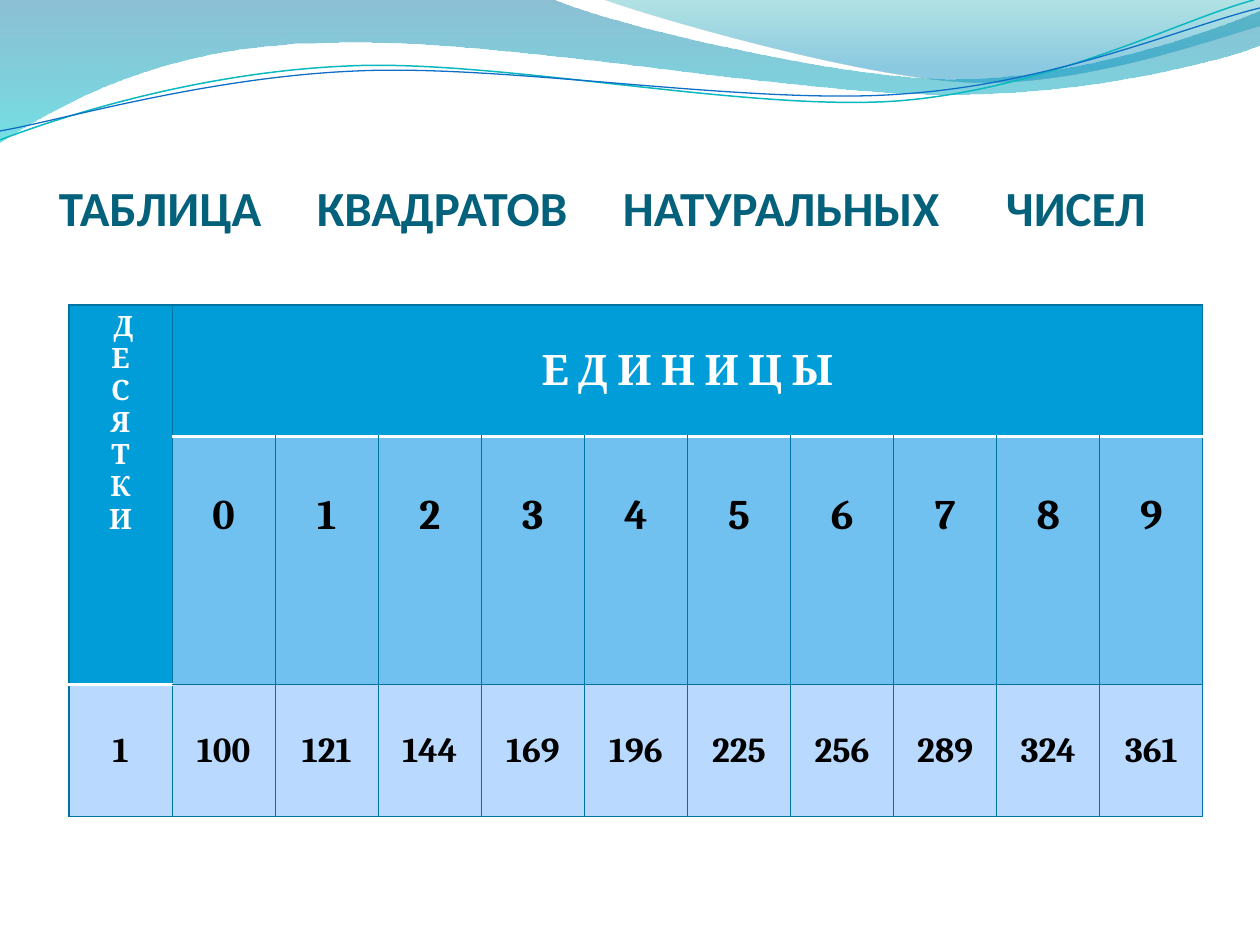
from lxml import etree
from pptx import Presentation
from pptx.dml.color import RGBColor
from pptx.enum.text import MSO_ANCHOR, PP_ALIGN
from pptx.oxml.ns import qn
from pptx.util import Pt

PX = 914400 / 126
CENTER = PP_ALIGN.CENTER
BOTTOM = MSO_ANCHOR.BOTTOM
TOP = MSO_ANCHOR.TOP
WHITE = RGBColor(0xFF, 0xFF, 0xFF)
BLACK = RGBColor(0, 0, 0)
TITLE_TEAL = RGBColor(0x04, 0x61, 0x7B)
HEADER_BLUE = RGBColor(0x00, 0x9D, 0xD9)
UNITS_BLUE = RGBColor(0x70, 0xC1, 0xEF)
SQUARES_BLUE = RGBColor(0xB9, 0xD9, 0xFF)
GRID_BLUE = RGBColor(0x00, 0x74, 0xA1)
CYAN = RGBColor(0x00, 0xC6, 0xCF)
SEA = RGBColor(0x00, 0xA1, 0xA9)
SKY = RGBColor(0x00, 0x8B, 0xBF)
LINE_TEAL = RGBColor(0x0A, 0xB8, 0xBF)
LINE_BLUE = RGBColor(0x0F, 0x6F, 0xC6)


def px(value):
    return round(value * PX)


def wave(start, segments, closed):
    anchors = [start] + [segment[-2:] for segment in segments]
    left = min(x for x, y in anchors)
    top = min(y for x, y in anchors)
    builder = slide.shapes.build_freeform(*start, scale=PX)
    builder.add_line_segments(anchors[1:], close=closed)
    shape = builder.convert_to_shape()
    shape.shadow.inherit = False
    steps = list(shape._element.spPr.iter(qn("a:lnTo")))
    for step, segment in zip(steps, segments):
        if len(segment) == 6:
            curve = etree.Element(qn("a:cubicBezTo"))
            for x, y in zip(segment[::2], segment[1::2]):
                etree.SubElement(curve, qn("a:pt"), x=str(x - left), y=str(y - top))
            step.getparent().replace(step, curve)
    return shape


prs = Presentation()
prs.slide_width = px(1260)
prs.slide_height = px(945)
slide = prs.slides.add_slide(prs.slide_layouts[6])

bands = [
    ((0, 0), [(554, 0), (600, 21, 837, 79, 955, 79), (1075, 79, 1207, 33, 1260, 11),
              (1260, 45), (1239, 55, 1096, 96, 940, 94), (784, 94, 481, 35, 324, 43),
              (163, 45, 58, 105, 0, 142)],
     [(0, GRID_BLUE, 45), (1, CYAN, 55)]),
    ((604, 0), [(641, 14, 859, 78, 969, 82), (1079, 87, 1211, 40, 1260, 26), (1260, 0)],
     [(0, SEA, 30), (0.8, SKY, 45)]),
]
for start, segments, stops in bands:
    band = wave(start, segments, True)
    band.line.fill.background()
    band.fill.gradient()
    band.fill.gradient_angle = 270
    for stop, (position, color, opacity) in zip(band.fill.gradient_stops, stops):
        stop.position = position
        stop.color.rgb = color
    for color_node, (position, color, opacity) in zip(
            band._element.spPr.iter(qn("a:srgbClr")), stops):
        etree.SubElement(color_node, qn("a:alpha"), val=str(opacity * 1000))

strands = [
    ((0, 140), [(60, 117, 199, 72, 349, 66), (498, 59, 747, 112, 898, 101),
                (1050, 89, 1182, 19, 1254, 0)], LINE_TEAL, 0.85),
    ((0, 131), [(59, 121, 207, 77, 357, 71), (508, 64, 752, 106, 903, 94),
                (1053, 84, 1186, 26, 1260, 8)], LINE_BLUE, 0.75),
]
for start, segments, color, width in strands:
    strand = wave(start, segments, False)
    strand.fill.background()
    strand.line.color.rgb = color
    strand.line.width = Pt(width)

title = slide.shapes.add_textbox(px(59), px(78), px(1134), px(158)).text_frame
title.word_wrap = True
title.vertical_anchor = BOTTOM
title.margin_left = title.margin_right = title.margin_bottom = 0
heading = title.paragraphs[0]
tabs = etree.SubElement(heading._p.get_or_add_pPr(), qn("a:tabLst"))
for stop in (258, 564, 947):
    etree.SubElement(tabs, qn("a:tab"), pos=str(px(stop)), algn="l")
run = heading.add_run()
run.text = "\t".join(["ТАБЛИЦА", "КВАДРАТОВ", "НАТУРАЛЬНЫХ", "ЧИСЕЛ"])
run.font.name = "Calibri"
run.font.size = Pt(28)
run.font.bold = True
run.font.color.rgb = TITLE_TEAL

row_heights = [132, 81, 132]
table_frame = slide.shapes.add_table(3, 11, px(69), px(305), px(1134), px(379))
squares = table_frame.table
squares.first_row = False
squares.horz_banding = False
for column in squares.columns:
    column.width = px(1134) // 11
for row, height in zip(squares.rows, row_heights):
    row.height = px(height)
table_frame.height = px(379)
squares.cell(0, 0).merge(squares.cell(1, 0))
squares.cell(0, 1).merge(squares.cell(0, 10))

contents = [
    [" Д\nЕ\nС\nЯ\nТ\nК\nИ", "Е Д И Н И Ц Ы"] + [""] * 9,
    [""] + [str(unit) for unit in range(10)],
    ["1"] + [str((10 + unit) ** 2) for unit in range(10)],
]
row_styles = [(24, HEADER_BLUE, WHITE, 43), (24, UNITS_BLUE, BLACK, 55),
              (20, SQUARES_BLUE, BLACK, 47)]

for r, texts in enumerate(contents):
    for c, text in enumerate(texts):
        size, fill, ink, top = row_styles[r]
        if c == 0 and r < 2:
            size, fill, ink, top = 16, HEADER_BLUE, WHITE, 6
        cell = squares.cell(r, c)
        cell.fill.solid()
        cell.fill.fore_color.rgb = fill
        cell.vertical_anchor = TOP
        cell.margin_top = px(top)
        white_below = r == 0 or (r == 1 and c == 0)
        white_above = (r == 1 and c > 0) or (r == 2 and c == 0)
        edges = [("L", False), ("R", False), ("T", white_above), ("B", white_below)]
        for place, (side, is_white) in enumerate(edges):
            border = etree.Element(qn("a:ln" + side), w=str(Pt(2 if is_white else 0.75)))
            paint = etree.SubElement(border, qn("a:solidFill"))
            etree.SubElement(paint, qn("a:srgbClr"), val=str(WHITE if is_white else GRID_BLUE))
            cell._tc.get_or_add_tcPr().insert(place, border)
        if not text:
            continue
        for i, part in enumerate(text.split("\n")):
            frame = cell.text_frame
            paragraph = frame.add_paragraph() if i else frame.paragraphs[0]
            paragraph.alignment = CENTER
            run = paragraph.add_run()
            run.text = part
            run.font.name = "Cambria"
            run.font.size = Pt(size)
            run.font.bold = True
            run.font.color.rgb = ink

prs.save("out.pptx")
